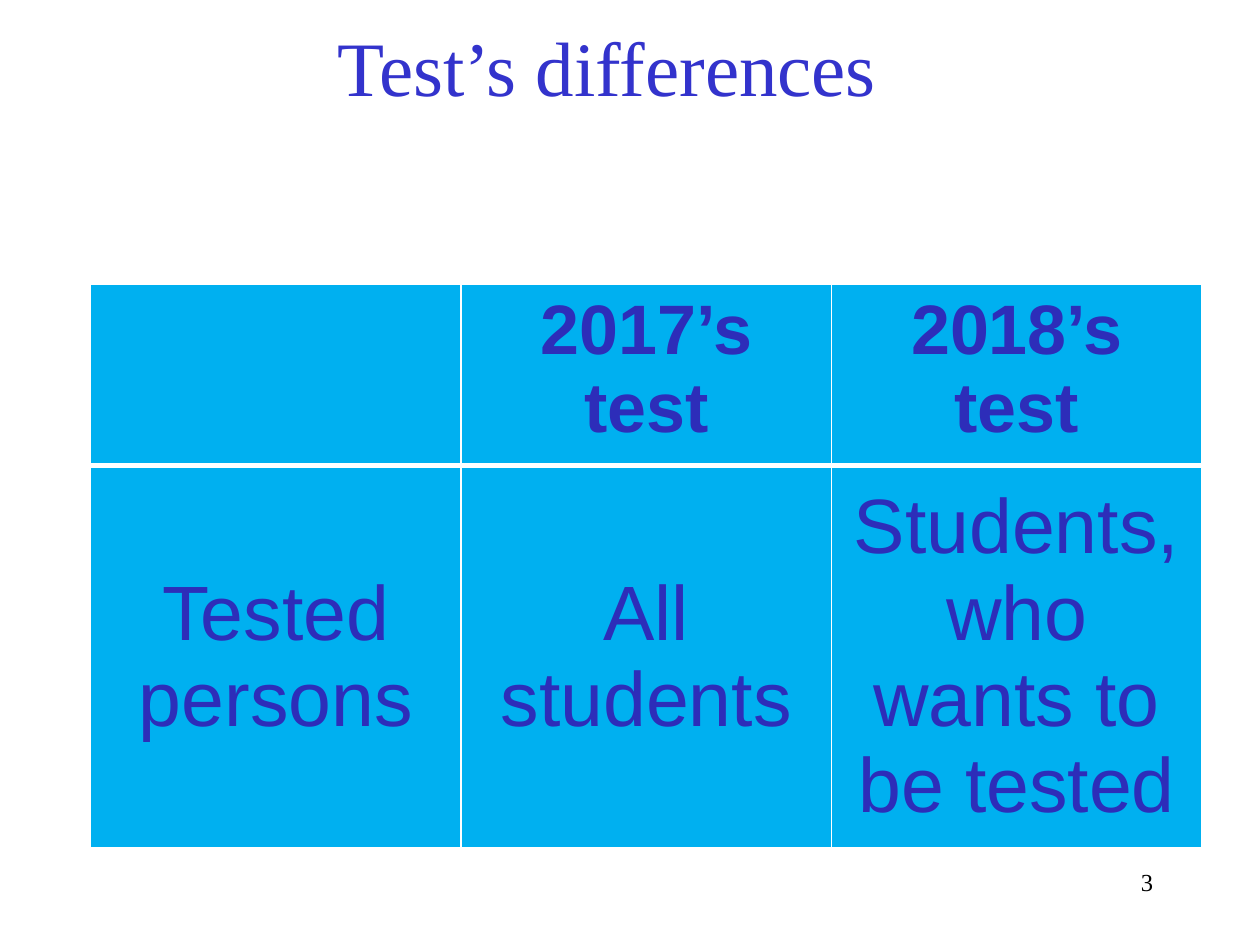
from lxml import etree
from pptx import Presentation
from pptx import util as u
from pptx.dml.color import RGBColor
from pptx.enum import text
from pptx.oxml.ns import qn

TITLE = "Test’s differences"
PAGE = "3"
COMPARISON = [
    ["", "2017’s test", "2018’s test"],
    ["Tested persons", "All students", "Students, who wants to be tested"],
]
ROW_HEIGHTS = [0.86, 2.11]
COLUMN_WIDTH = 2.94
THEME = {
    "serif": "Times New Roman", "sans": "Arial",
    "title": "3333CC", "cell_text": "2D2DB9", "cell": "00B0F0",
    "rule": "FFFFFF", "page": "000000",
    "title_size": 44, "header_size": 40, "body_size": 44, "page_size": 14,
    "thin": 1, "thick": 3,
}


def style(paragraph, face, size, color, align, bold=False):
    paragraph.alignment = align
    font = paragraph.font
    font.name, font.size, font.bold = THEME[face], u.Pt(THEME[size]), bold
    font.color.rgb = RGBColor.from_string(THEME[color])


def add_label(slide, words, box, anchor, face, size, color, align):
    frame = slide.shapes.add_textbox(*map(u.Inches, box)).text_frame
    frame.word_wrap = True
    frame.vertical_anchor = anchor
    frame.text = words
    style(frame.paragraphs[0], face, size, color, align)


def add_borders(cell, widths):
    properties = cell._tc.get_or_add_tcPr()
    for position, (side, width) in enumerate(widths.items()):
        line = etree.Element(qn(f"a:ln{side}"), w=str(u.Pt(THEME[width])))
        fill = etree.SubElement(line, qn("a:solidFill"))
        etree.SubElement(fill, qn("a:srgbClr"), val=THEME["rule"])
        properties.insert(position, line)


def add_comparison(slide):
    columns = len(COMPARISON[0])
    table = slide.shapes.add_table(
        len(COMPARISON), columns, u.Inches(0.72), u.Inches(2.26),
        u.Inches(columns * COLUMN_WIDTH), u.Inches(sum(ROW_HEIGHTS))).table
    table.horz_banding = False
    for column in table.columns:
        column.width = u.Inches(COLUMN_WIDTH)
    for r, (entries, height) in enumerate(zip(COMPARISON, ROW_HEIGHTS)):
        table.rows[r].height = u.Inches(height)
        header = r == 0
        size = "header_size" if header else "body_size"
        borders = {"L": "thin", "R": "thin",
                   "T": "thin" if header else "thick",
                   "B": "thick" if header else "thin"}
        for c, words in enumerate(entries):
            cell = table.cell(r, c)
            cell.text = words
            cell.vertical_anchor = (text.MSO_ANCHOR.TOP if header
                                    else text.MSO_ANCHOR.MIDDLE)
            cell.fill.solid()
            cell.fill.fore_color.rgb = RGBColor.from_string(THEME["cell"])
            style(cell.text_frame.paragraphs[0], "sans", size, "cell_text",
                  text.PP_ALIGN.CENTER, header)
            add_borders(cell, borders)


def main():
    deck = Presentation()
    deck.slide_width, deck.slide_height = u.Inches(10), u.Inches(7.5)
    slide = deck.slides.add_slide(deck.slide_layouts[6])
    add_label(slide, TITLE, (0.57, -0.1, 8.5, 1.25), text.MSO_ANCHOR.MIDDLE,
              "serif", "title_size", "title", text.PP_ALIGN.CENTER)
    add_comparison(slide)
    add_label(slide, PAGE, (7.17, 6.83, 2.08, 0.5), text.MSO_ANCHOR.TOP,
              "serif", "page_size", "page", text.PP_ALIGN.RIGHT)
    deck.save("out.pptx")


if __name__ == "__main__":
    main()
